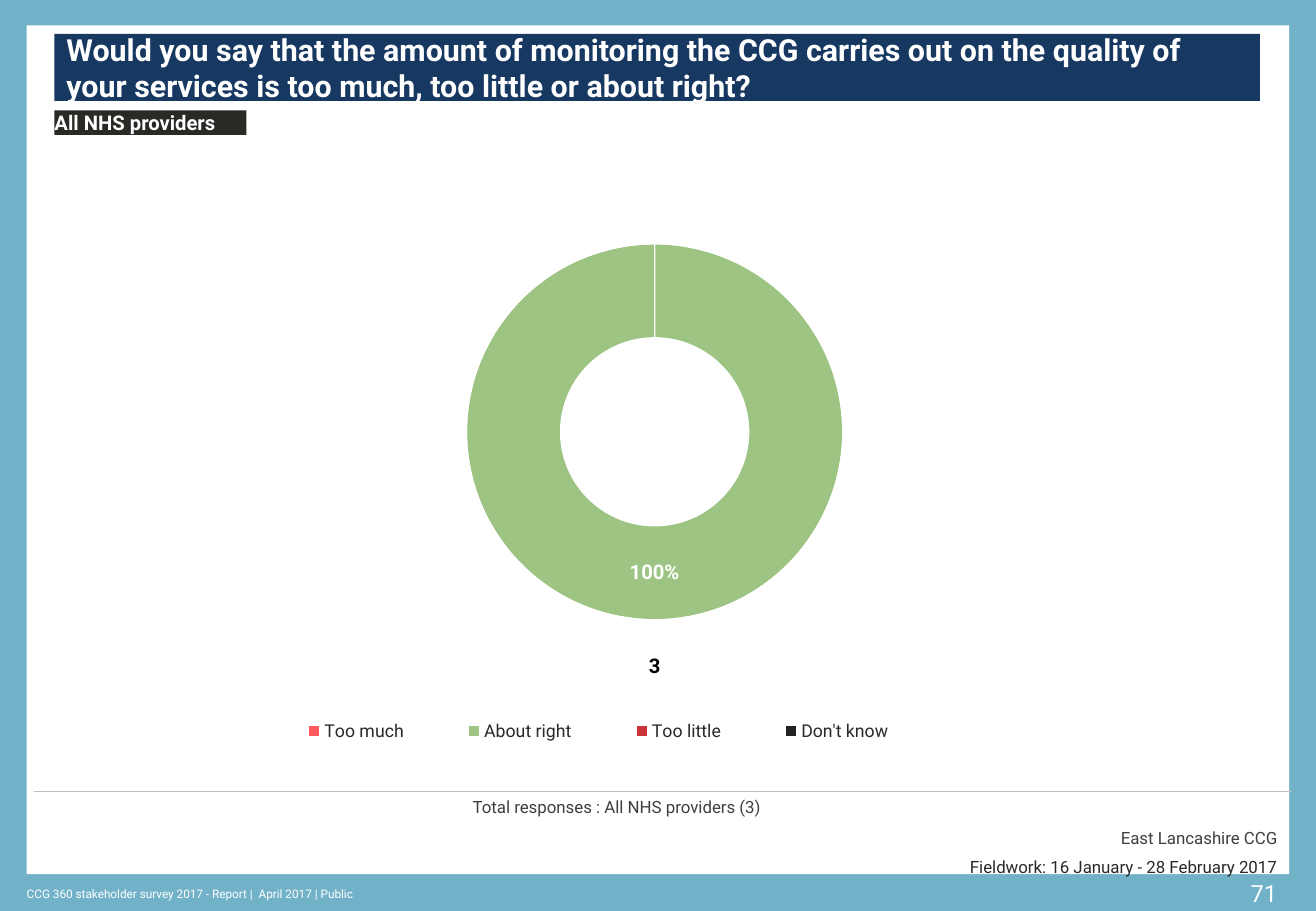
from dataclasses import dataclass

from lxml import etree
from pptx import Presentation
from pptx.chart.data import CategoryChartData
from pptx.dml.color import RGBColor
from pptx.enum.chart import XL_CHART_TYPE, XL_LEGEND_POSITION
from pptx.enum.shapes import MSO_CONNECTOR, MSO_SHAPE
from pptx.enum.text import MSO_ANCHOR, PP_ALIGN
from pptx.oxml.ns import qn
from pptx.util import Cm, Pt

LEFT, RIGHT = PP_ALIGN.LEFT, PP_ALIGN.RIGHT
TOP, MIDDLE = MSO_ANCHOR.TOP, MSO_ANCHOR.MIDDLE
RECTANGLE = MSO_SHAPE.RECTANGLE
STRAIGHT = MSO_CONNECTOR.STRAIGHT
DOUGHNUT = XL_CHART_TYPE.DOUGHNUT
BOTTOM = XL_LEGEND_POSITION.BOTTOM

SLIDE_WIDTH, SLIDE_HEIGHT = 27.51, 19.05
FONT = "Roboto"
WHITE, DARK = "FFFFFF", "292926"


@dataclass
class Line:
    text: str
    align: PP_ALIGN = LEFT
    space_before: float = 0


@dataclass
class Box:
    left: float
    top: float
    width: float
    height: float
    lines: tuple[Line, ...] = ()
    size: float = 10
    color: str = WHITE
    bold: bool = False
    fill: str | None = None
    anchor: MSO_ANCHOR = TOP
    inset: bool = False


@dataclass
class Ring:
    name: str
    values: tuple[int, ...]
    number_format: str
    label_color: str
    colors: tuple[str | None, ...]


PANEL = Box(0.56, 0.53, 26.39, 17.75, fill=WHITE)
TEXT_BOXES = (
    Box(25.83, 18.26, 1.12, 0.86, (Line("71", RIGHT),), 14, inset=True),
    Box(0.56, 18.44, 13.59, 0.51,
        (Line("CCG 360 stakeholder survey 2017 - Report |  April 2017 | Public"),),
        7, anchor=MIDDLE),
    Box(1.14, 0.71, 25.2, 1.4,
        (Line("Would you say that the amount of monitoring the CCG carries out on "
              "the quality of your services is too much, too little or about right?"),),
        18, bold=True, fill="173861", anchor=MIDDLE, inset=True),
    Box(1.14, 2.31, 4.01, 0.51, (Line("All NHS providers"),), 12, bold=True, fill=DARK),
    Box(9.63, 16.54, 17.32, 0.97,
        (Line("Total responses : All NHS providers (3)"),
         Line("East Lancashire CCG", RIGHT, 6)),
        color="3F3F3B", inset=True),
    Box(19.35, 17.91, 7.34, 0.43,
        (Line("Fieldwork: 16 January - 28 February 2017", RIGHT),), color=DARK),
)

CATEGORIES = ("Too much", "About right", "Too little", "Don't know")
RINGS = (
    Ring("Series 1", (0, 100, 0, 0), '0"%";;;', WHITE,
         ("FF585D", "9DC482", "CB333B", "222223")),
    Ring("Series 2", (0, 3, 0, 0), "0;;;", "000000", (None,) * 4),
)


def rgb(color: str) -> RGBColor:
    return RGBColor.from_string(color)


def set_fill(fill, color: str | None) -> None:
    if color is None:
        fill.background()
    else:
        fill.solid()
        fill.fore_color.rgb = rgb(color)


def set_font(font, size: float, color: str, bold: bool = False, name: str = FONT) -> None:
    font.name = name
    font.size = Pt(size)
    font.bold = bold
    font.color.rgb = rgb(color)


def draw_box(slide, box: Box) -> None:
    place = [Cm(length) for length in (box.left, box.top, box.width, box.height)]
    if box.fill:
        shape = slide.shapes.add_shape(RECTANGLE, *place)
        shape.shadow.inherit = False
        set_fill(shape.fill, box.fill)
        shape.line.fill.background()
    else:
        shape = slide.shapes.add_textbox(*place)
    frame = shape.text_frame
    frame.word_wrap = True
    frame.vertical_anchor = box.anchor
    if not box.inset:
        frame.margin_left = frame.margin_right = 0
        frame.margin_top = frame.margin_bottom = 0
    for index, line in enumerate(box.lines):
        paragraph = frame.add_paragraph() if index else frame.paragraphs[0]
        paragraph.text = line.text
        paragraph.alignment = line.align
        paragraph.space_before = Pt(line.space_before)
        set_font(paragraph.font, box.size, box.color, box.bold)


def draw_divider(slide) -> None:
    divider = slide.shapes.add_connector(STRAIGHT, Cm(0.71), Cm(16.54), Cm(27), Cm(16.54))
    divider.line.color.rgb = rgb("BFBFBF")
    divider.line.width = Pt(0.25)
    etree.SubElement(divider.element.spPr, qn("a:effectLst"))


def set_layout(parent, previous_tag: str | None, inner: bool,
               x: float, y: float, w: float, h: float) -> None:
    for existing in parent.findall(qn("c:layout")):
        parent.remove(existing)
    layout = etree.Element(qn("c:layout"))
    manual = etree.SubElement(layout, qn("c:manualLayout"))
    settings = {"layoutTarget": "inner"} if inner else {}
    settings |= {"xMode": "edge", "yMode": "edge", "x": x, "y": y, "w": w, "h": h}
    for tag, value in settings.items():
        etree.SubElement(manual, qn(f"c:{tag}")).set("val", str(value))
    if previous_tag:
        parent.find(qn(previous_tag)).addnext(layout)
    else:
        parent.insert(0, layout)


def style_ring(series, ring: Ring) -> None:
    for index, color in enumerate(ring.colors):
        point_format = series.points[index].format
        set_fill(point_format.fill, color)
        point_format.line.color.rgb = rgb(WHITE)
        point_format.line.width = Pt(0.75)
    labels = series.data_labels
    labels.show_value = True
    labels.number_format = ring.number_format
    labels.number_format_is_linked = False
    set_font(labels.font, 12, ring.label_color, True)


def draw_chart(slide) -> None:
    data = CategoryChartData()
    data.categories = CATEGORIES
    for ring in RINGS:
        data.add_series(ring.name, ring.values)
    chart = slide.shapes.add_chart(
        DOUGHNUT, 0, Cm(3.12), Cm(SLIDE_WIDTH), Cm(13.41), data).chart
    chart.has_title = False
    set_font(chart.font, 18, DARK, name="Arial")
    plot = chart.plots[0]
    plot.vary_by_categories = True
    for series, ring in zip(plot.series, RINGS):
        style_ring(series, ring)
    chart.has_legend = True
    legend = chart.legend
    legend.position = BOTTOM
    legend.include_in_layout = False
    set_font(legend.font, 10.5, DARK)
    chart_element = chart.element.find(qn("c:chart"))
    plot_area = chart_element.find(qn("c:plotArea"))
    plot_area.find(".//" + qn("c:holeSize")).set("val", "38")
    set_layout(plot_area, None, True, 0.283, 0, 0.429, 0.881)
    set_layout(chart_element.find(qn("c:legend")), "c:legendPos", False,
               0.19, 0.867, 0.53, 0.08)


def main() -> None:
    presentation = Presentation()
    presentation.slide_width = Cm(SLIDE_WIDTH)
    presentation.slide_height = Cm(SLIDE_HEIGHT)
    slide = presentation.slides.add_slide(presentation.slide_layouts[6])
    set_fill(slide.background.fill, "71B2C9")
    draw_box(slide, PANEL)
    draw_divider(slide)
    draw_chart(slide)
    for box in TEXT_BOXES:
        draw_box(slide, box)
    presentation.save("out.pptx")


if __name__ == "__main__":
    main()
